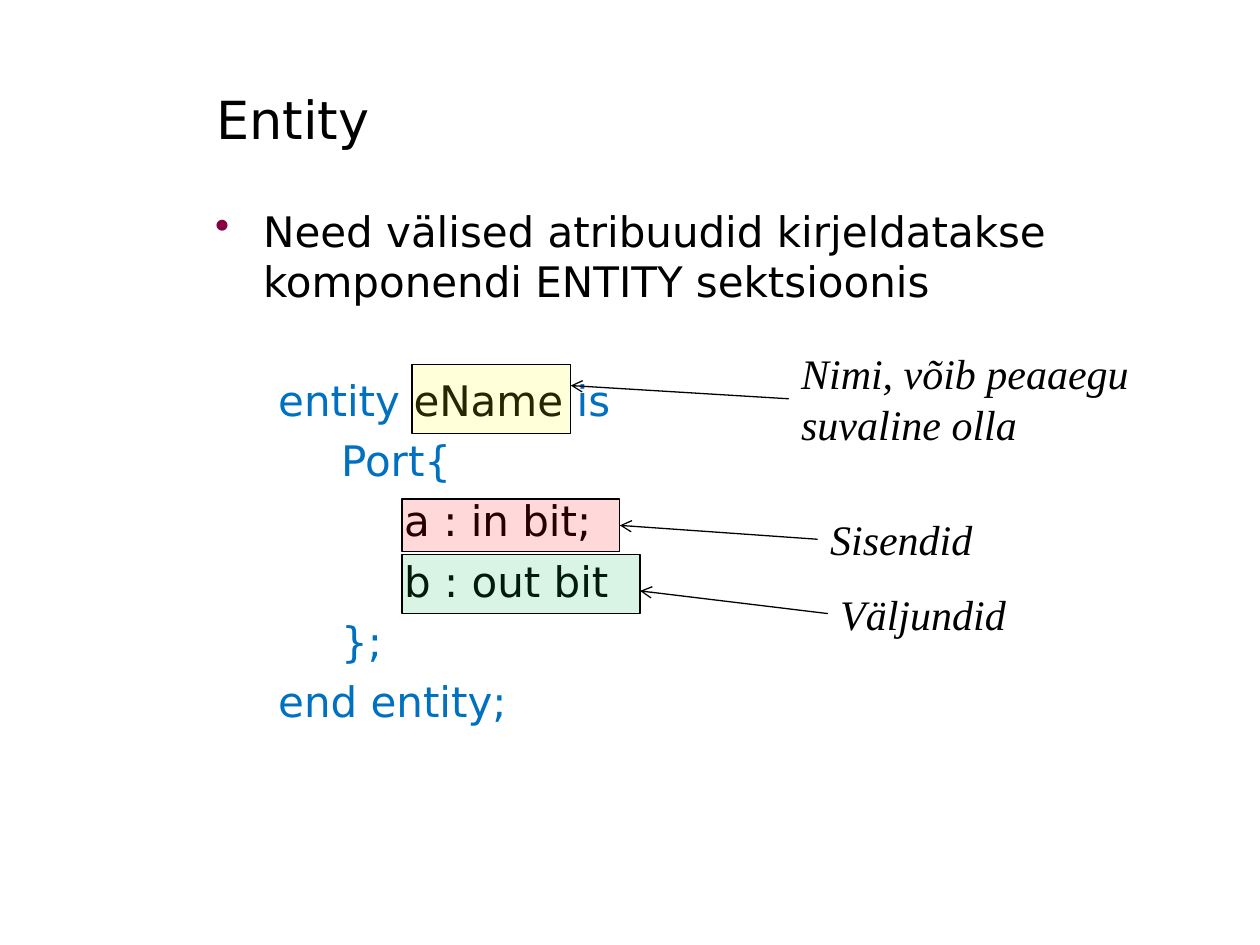
from lxml.etree import SubElement as Sub
from pptx import Presentation
from pptx.dml.color import RGBColor as RGB
from pptx.enum.shapes import MSO_CONNECTOR as Link, MSO_SHAPE as Kind
from pptx.enum.text import MSO_ANCHOR as Anchor, MSO_AUTO_SIZE as Fit
from pptx.oxml.ns import qn
from pptx.util import Inches, Pt

HUE = {"ink": "000000", "code": "0070C0", "dot": "870042",
       "name": "FFFF00", "in": "FF0000", "out": "00B050"}
SANS, SERIF = "DejaVu Sans", "Times New Roman"

deck = Presentation()
deck.slide_width, deck.slide_height = Inches(10), Inches(7.5)
col, row = deck.slide_width / 100, deck.slide_height / 75
slide = deck.slides.add_slide(deck.slide_layouts[6])
shapes = slide.shapes


def place(x, y, w, h):
    return int(x * col), int(y * row), int(w * col), int(h * row)


def style(run, size, face, hue="ink", slant=False):
    font = run.font
    font.size, font.name, font.italic = Pt(size), face, slant
    font.color.rgb = RGB.from_string(HUE[hue])


title = shapes.add_textbox(*place(16.2, 4.7, 74.4, 9.4)).text_frame
title.word_wrap = True
title.vertical_anchor = Anchor.MIDDLE
title.text = "Entity"
style(title.paragraphs[0].runs[0], 30, SANS)

body = shapes.add_textbox(*place(16.1, 15.5, 74.8, 52.9)).text_frame
body.word_wrap = True
body.margin_top = int(0.8 * row)
body.text = "Need välised atribuudid kirjeldatakse komponendi ENTITY sektsioonis"
lead = body.paragraphs[0]
style(lead.runs[0], 24, SANS)
props = lead._p.get_or_add_pPr()
props.set("marL", str(int(3.8 * col)))
props.set("indent", str(int(-3.8 * col)))
Sub(Sub(props, qn("a:buClr")), qn("a:srgbClr")).set("val", HUE["dot"])
Sub(props, qn("a:buChar")).set("char", "•")

code = [
    (1, 39, [("entity ", "code"), ("eName ", "ink"), ("is", "code")]),
    (2, 5.6, [("Port{", "code")]),
    (3, 5.6, [("a : in bit;", "ink")]),
    (3, 5.6, [("b : out bit", "ink")]),
    (2, 5.6, [("};", "code")]),
    (1, 5.6, [("end entity;", "code")]),
]
for depth, gap, parts in code:
    line = body.add_paragraph()
    line.space_before = Pt(gap)
    line._p.get_or_add_pPr().set("marL", str(int(depth * 5 * col)))
    for text, hue in parts:
        run = line.add_run()
        run.text = text
        style(run, 24, SANS, hue)

notes = [
    ("Nimi, võib peaaegu suvaline olla", "name", (32.7, 28.9, 12.6, 5.5),
     (62.6, 27.1, 31.5, 9.1), True, 30.6),
    ("Sisendid", "in", (31.9, 39.6, 17.3, 4.2),
     (64.9, 40.3, 13.4, 5), False, None),
    ("Väljundid", "out", (31.9, 44, 18.9, 4.7),
     (65.7, 46.2, 19.7, 5), True, 46.9),
]
for text, hue, area, spot, wrap, tip in notes:
    mark = shapes.add_shape(Kind.RECTANGLE, *place(*area))
    mark.shadow.inherit = False
    mark.fill.solid()
    mark.fill.fore_color.rgb = RGB.from_string(HUE[hue])
    tint = mark._element.spPr.find(".//" + qn("a:srgbClr"))
    Sub(tint, qn("a:alpha")).set("val", "15000")

    label = shapes.add_textbox(*place(*spot))
    frame = label.text_frame
    frame.word_wrap = wrap
    frame.auto_size = Fit.SHAPE_TO_FIT_TEXT
    frame.text = text
    style(frame.paragraphs[0].runs[0], 24, SERIF, slant=True)

    end = mark.left + mark.width, int((tip or 0) * row)
    arrow = shapes.add_connector(Link.STRAIGHT, 0, 0, *end)
    arrow.begin_connect(label, 1)
    if tip is None:
        arrow.end_connect(mark, 3)
    for item in (mark, arrow):
        item.line.color.rgb = RGB.from_string(HUE["ink"])
        item.line.width = Pt(0.75)
    Sub(arrow.line._get_or_add_ln(), qn("a:tailEnd")).set("type", "arrow")
    Sub(arrow._element.spPr, qn("a:effectLst"))

deck.save("out.pptx")
